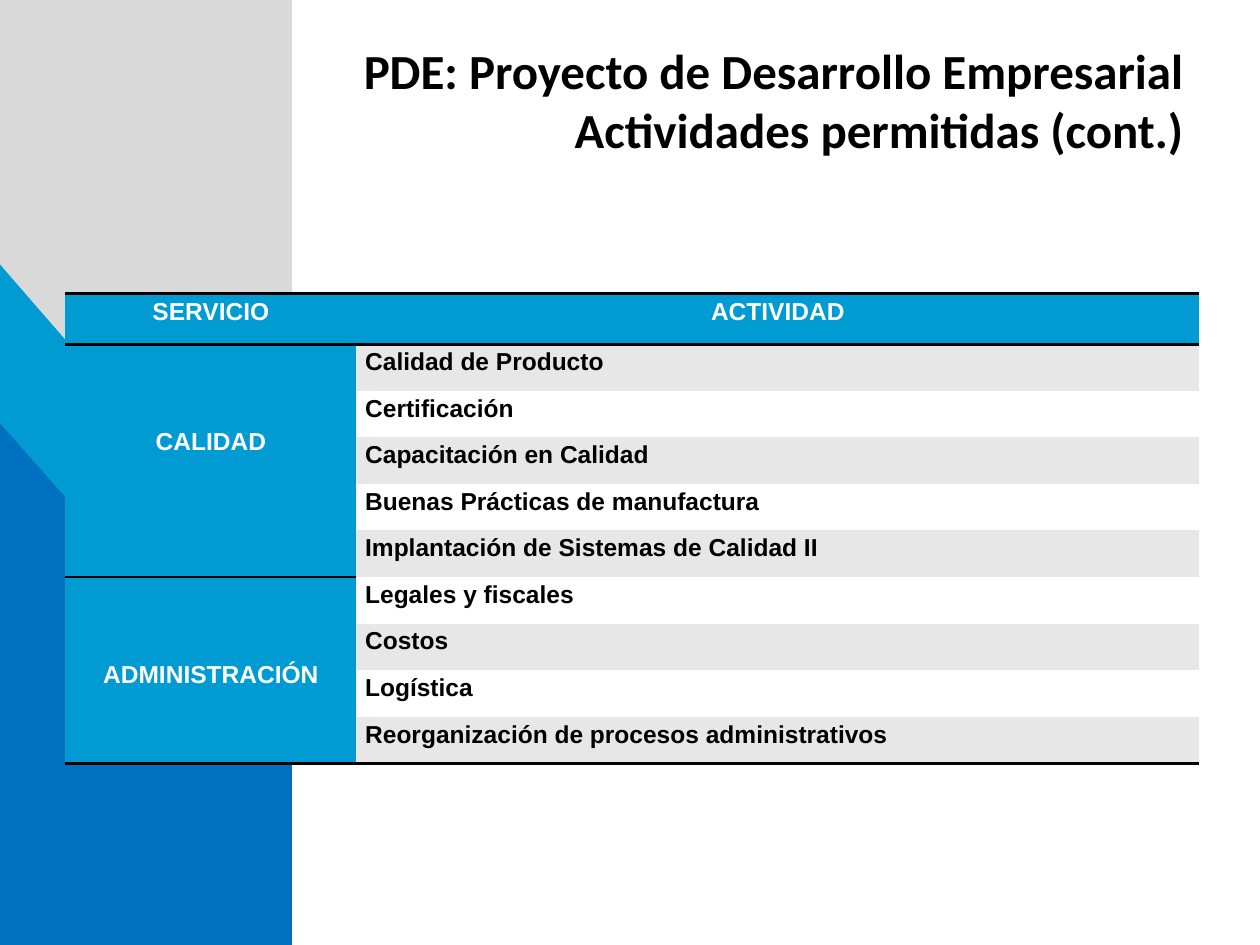
import dataclasses
import typing

import lxml.etree
import pptx
import pptx.dml.color
import pptx.enum.shapes
import pptx.enum.text
import pptx.oxml.ns
import pptx.util

Pt = pptx.util.Pt
RGB = pptx.dml.color.RGBColor
Shape = pptx.enum.shapes.MSO_SHAPE
Align = pptx.enum.text.PP_ALIGN
Anchor = pptx.enum.text.MSO_ANCHOR
qn = pptx.oxml.ns.qn


@dataclasses.dataclass(frozen=True)
class Theme:
    white: str = "FFFFFF"
    black: str = "000000"
    gray: str = "D9D9D9"
    band: str = "E7E7E7"
    sky: str = "009BD2"
    blue: str = "0070C0"
    title_font: str = "Calibri"
    title_size: float = 28
    cell_font: str = "Arial"
    cell_size: float = 14
    rule: float = 2
    hair: float = 1


class Block(typing.NamedTuple):
    kind: Shape
    left: float
    top: float
    width: float
    height: float
    color: str


class Group(typing.NamedTuple):
    name: str
    items: list[str]


THEME = Theme()
WIDE, HIGH = 720, 540
SIDE = 167

BLOCKS = [
    Block(Shape.RECTANGLE, 0, 0, SIDE, HIGH, THEME.gray),
    Block(Shape.RIGHT_TRIANGLE, 0, 151.2, 337.7, 388.8, THEME.sky),
    Block(Shape.RIGHT_TRIANGLE, 0, 241.9, 263.5, 298.1, THEME.blue),
    Block(Shape.RECTANGLE, SIDE, 0, WIDE - SIDE, HIGH, THEME.white),
]

GROUPS = [
    Group("CALIDAD", [
        "Calidad de Producto",
        "Certificación",
        "Capacitación en Calidad",
        "Buenas Prácticas de manufactura",
        "Implantación de Sistemas de Calidad II",
    ]),
    Group("ADMINISTRACIÓN", [
        "Legales y fiscales",
        "Costos",
        "Logística",
        "Reorganización de procesos administrativos",
    ]),
]

LEFT, TOP = 37.4, 167.8
COLS = (166.3, 481.7)
HEAD, ROW = 28.8, 26.64
DROP = 46  # space above a group name


def draw_block(slide, block: Block) -> None:
    shape = slide.shapes.add_shape(
        block.kind, Pt(block.left), Pt(block.top), Pt(block.width), Pt(block.height))
    shape.shadow.inherit = False
    shape.fill.solid()
    shape.fill.fore_color.rgb = RGB.from_string(block.color)
    shape.line.fill.background()


def set_font(para, face: str, size: float, color: str) -> None:
    para.font.name = face
    para.font.size = Pt(size)
    para.font.bold = True
    para.font.color.rgb = RGB.from_string(color)


def draw_title(slide, text: str) -> None:
    title = slide.shapes.title
    # Bring the title in front of the white panel
    title.element.getparent().append(title.element)
    title.left, title.top = Pt(172.8), Pt(37.4)
    title.width, title.height = Pt(510.5), Pt(56.9)
    frame = title.text_frame
    frame.text = text
    frame.word_wrap = True
    frame.auto_size = pptx.enum.text.MSO_AUTO_SIZE.NONE
    frame.vertical_anchor = Anchor.BOTTOM
    para = frame.paragraphs[0]
    para.alignment = Align.RIGHT
    set_font(para, THEME.title_font, THEME.title_size, THEME.black)


def set_edges(cell, top: float, bottom: float) -> None:
    props = cell._tc.get_or_add_tcPr()
    for side, width in (("L", 0), ("R", 0), ("T", top), ("B", bottom)):
        line = lxml.etree.SubElement(props, qn(f"a:ln{side}"), w=str(Pt(width)))
        if width:
            fill = lxml.etree.SubElement(line, qn("a:solidFill"))
            lxml.etree.SubElement(fill, qn("a:srgbClr"), val=THEME.black)
        else:
            lxml.etree.SubElement(line, qn("a:noFill"))


def fill_cell(cell, text: str, color: str, back: str, align: Align,
              top: float, bottom: float, drop: float = 0) -> None:
    set_edges(cell, top, bottom)
    cell.fill.solid()
    cell.fill.fore_color.rgb = RGB.from_string(back)
    cell.margin_left = cell.margin_right = Pt(5)
    cell.margin_top, cell.margin_bottom = Pt(drop), Pt(0)
    cell.vertical_anchor = Anchor.TOP
    cell.text = text
    para = cell.text_frame.paragraphs[0]
    para.alignment = align
    para.line_spacing = 1.15
    para.space_before = Pt(5)
    set_font(para, THEME.cell_font, THEME.cell_size, color)


def draw_table(slide, heads: tuple[str, str], groups: list[Group]) -> None:
    count = sum(len(group.items) for group in groups)
    table = slide.shapes.add_table(
        count + 1, 2, Pt(LEFT), Pt(TOP), Pt(sum(COLS)), Pt(HEAD + count * ROW)).table
    table.first_row = table.horz_banding = False
    for col, width in zip(table.columns, COLS):
        col.width = Pt(width)
    for num, row in enumerate(table.rows):
        row.height = Pt(ROW if num else HEAD)

    def edge(num: int, inner: float = 0) -> float:
        return THEME.rule if num in (0, 1, count + 1) else inner

    # Header row
    for col, text in enumerate(heads):
        fill_cell(table.cell(0, col), text, THEME.white, THEME.sky,
                  Align.CENTER, edge(0), edge(1))

    # Each group: one merged name cell beside its banded items
    row = 1
    for group in groups:
        end = row + len(group.items)
        first, last = table.cell(row, 0), table.cell(end - 1, 0)
        first.merge(last)
        fill_cell(first, group.name, THEME.white, THEME.sky, Align.CENTER,
                  edge(row, THEME.hair), edge(end, THEME.hair), DROP)
        set_edges(last, 0, edge(end, THEME.hair))
        for num, item in enumerate(group.items, row):
            back = THEME.band if num % 2 else THEME.white
            fill_cell(table.cell(num, 1), item, THEME.black, back,
                      Align.JUSTIFY, edge(num), edge(num + 1))
        row = end


def main() -> None:
    deck = pptx.Presentation()
    deck.slide_width, deck.slide_height = Pt(WIDE), Pt(HIGH)
    slide = deck.slides.add_slide(deck.slide_layouts.get_by_name("Title Only"))
    # Side panel, then title and table
    for block in BLOCKS:
        draw_block(slide, block)
    draw_title(slide, "PDE: Proyecto de Desarrollo Empresarial\vActividades permitidas (cont.)")
    draw_table(slide, ("SERVICIO", "ACTIVIDAD"), GROUPS)
    deck.save("out.pptx")


if __name__ == "__main__":
    main()
